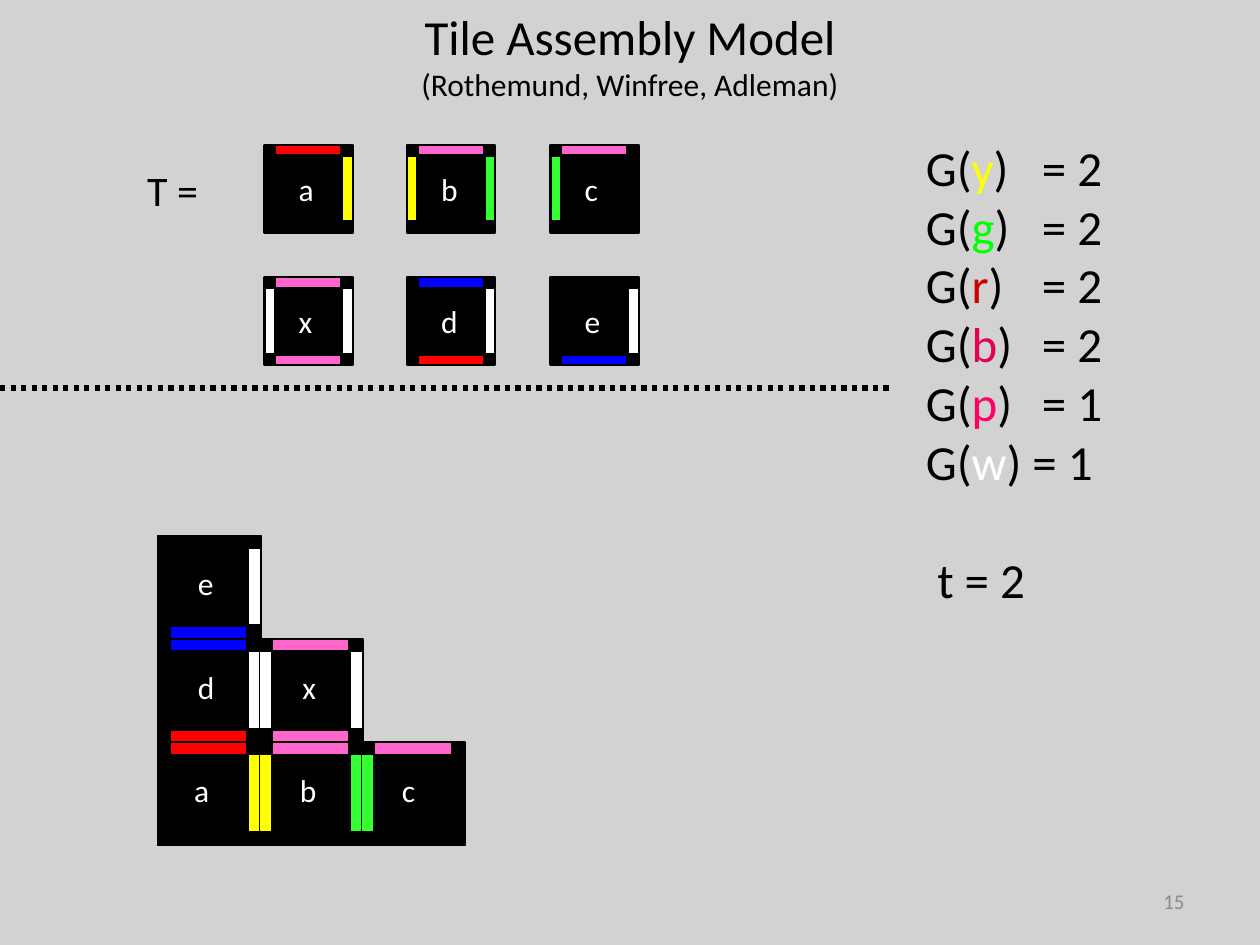
from lxml import etree
from pptx import Presentation
from pptx.dml.color import RGBColor
from pptx.enum.dml import MSO_LINE
from pptx.enum.shapes import MSO_CONNECTOR, MSO_SHAPE
from pptx.enum.text import MSO_ANCHOR, PP_ALIGN
from pptx.oxml.ns import qn
from pptx.util import Inches, Pt

RECTANGLE = MSO_SHAPE.RECTANGLE
STRAIGHT = MSO_CONNECTOR.STRAIGHT
SYSTEM_DOT = MSO_LINE.ROUND_DOT
TOP, MIDDLE = MSO_ANCHOR.TOP, MSO_ANCHOR.MIDDLE
LEFT, CENTER, RIGHT = PP_ALIGN.LEFT, PP_ALIGN.CENTER, PP_ALIGN.RIGHT

FONT = "Calibri"
COLORS = {
    "background": "D2D2D2", "black": "000000", "white": "FFFFFF", "gray": "8C8C8C",
    "red": "FF0000", "yellow": "FFFF00", "pink": "FF66CC", "green": "33FF33",
    "blue": "0000FF", "label green": "00FF00", "label red": "CC0000",
    "label blue": "E40059", "label pink": "FF0066",
}

# Content: glue on each side of each tile type
TILES = {
    "a": {"top": "red", "right": "yellow"},
    "b": {"left": "yellow", "top": "pink", "right": "green"},
    "c": {"left": "green", "top": "pink"},
    "x": {"left": "white", "top": "pink", "bottom": "pink", "right": "white"},
    "d": {"top": "blue", "right": "white", "bottom": "red"},
    "e": {"right": "white", "bottom": "blue"},
}
TITLE = [("Tile Assembly Model", 28), ("(Rothemund, Winfree, Adleman)", 18)]
GLUES = [
    ("y", "yellow", ")\t= 2"), ("g", "label green", ")\t= 2"),
    ("r", "label red", ")\t= 2"), ("b", "label blue", ")\t= 2"),
    ("p", "label pink", ")\t= 1"), ("w", "white", ") = 1"),
]

# Each layout: rows of letters, plus the left and top edges of the cells
TILE_SET = {
    "rows": ["abc", "xde"], "lefts": (2.1, 3.23, 4.37), "tops": (1.15, 2.2),
    "size": 0.7, "line": 1.25, "letter": (0.27, 0.2), "shifts": {},
}
ASSEMBLY = {
    "rows": ["e", "dx", "abc"], "lefts": (1.25, 2.06, 2.87), "tops": (4.25, 5.07, 5.89),
    "size": 0.82, "line": 1, "letter": (0.32, 0.23), "shifts": {"a": -0.03, "x": 0.02},
}


def rgb(name):
    return RGBColor.from_string(COLORS[name])


def write(paragraph, text, size=18, color="black", align=LEFT):
    run = paragraph.add_run()
    run.text = text
    run.font.name = FONT
    run.font.size = Pt(size)
    run.font.color.rgb = rgb(color)
    paragraph.alignment = align


def add_text_box(shapes, left, top, width, height, wrap=True, inset=None, anchor=TOP):
    box = shapes.add_textbox(Inches(left), Inches(top), Inches(width), Inches(height))
    frame = box.text_frame
    frame.word_wrap = wrap
    frame.vertical_anchor = anchor
    if inset is not None:
        frame.margin_left = frame.margin_right = Inches(inset)
        frame.margin_top = frame.margin_bottom = Inches(inset)
    return frame


def add_rectangle(shapes, left, top, width, height, color, line_width):
    shape = shapes.add_shape(
        RECTANGLE, Inches(left), Inches(top), Inches(width), Inches(height))
    shape.shadow.inherit = False
    shape.fill.solid()
    shape.fill.fore_color.rgb = rgb(color)
    shape.line.color.rgb = rgb("black")
    shape.line.width = Pt(line_width)


def add_tile(shapes, letter, left, top, layout):
    size, line_width = layout["size"], layout["line"]
    thickness = size * 0.12
    length, far = size * 0.75, size - thickness
    sides = {
        "left": (0, thickness, thickness, length),
        "top": (thickness, 0, length, thickness),
        "right": (far, thickness, thickness, length),
        "bottom": (thickness, far, length, thickness),
    }
    add_rectangle(shapes, left, top, size, size, "black", line_width)
    for side, color in TILES[letter].items():
        x, y, width, height = sides[side]
        add_rectangle(shapes, left + x, top + y, width, height, color, line_width)
    x, y = layout["letter"]
    x += layout["shifts"].get(letter, 0)
    frame = add_text_box(shapes, left + x, top + y, 0.15, 0.3, wrap=False, inset=0)
    write(frame.paragraphs[0], letter, color="white")


def add_tiles(slide, layout):
    group = slide.shapes.add_group_shape()
    for row, top in reversed(list(zip(layout["rows"], layout["tops"]))):
        for letter, left in zip(row, layout["lefts"]):
            add_tile(group.shapes, letter, left, top, layout)


def add_glue_strengths(slide):
    frame = add_text_box(slide.shapes, 7.25, 1.04, 2.08, 3.84)
    for index, (glue, color, strength) in enumerate(GLUES):
        paragraph = frame.paragraphs[0] if index == 0 else frame.add_paragraph()
        write(paragraph, "G(", size=28)
        write(paragraph, glue, size=28, color=color)
        write(paragraph, strength, size=28)
        tabs = etree.SubElement(paragraph._p.get_or_add_pPr(), qn("a:tabLst"))
        etree.SubElement(tabs, qn("a:tab"), pos=str(Inches(0.92)), algn="l")
    # Temperature, one line further down
    paragraph = frame.add_paragraph()
    paragraph.space_before = Pt(34)
    paragraph._p.get_or_add_pPr().set("marL", str(Inches(0.09)))
    write(paragraph, "t = 2", size=28)


def main():
    presentation = Presentation()
    presentation.slide_width, presentation.slide_height = Inches(10), Inches(7.5)
    slide = presentation.slides.add_slide(presentation.slide_layouts[5])
    slide.background.fill.solid()
    slide.background.fill.fore_color.rgb = rgb("background")

    # Title
    title = slide.shapes.title
    title.left, title.top = Inches(0), Inches(0)
    title.width, title.height = Inches(10), Inches(1.37)
    frame = title.text_frame
    frame.vertical_anchor = TOP
    for index, (text, size) in enumerate(TITLE):
        paragraph = frame.paragraphs[0] if index == 0 else frame.add_paragraph()
        write(paragraph, text, size=size, align=CENTER)

    # Tile set above the divider, assembly below it
    frame = add_text_box(slide.shapes, 1.07, 1.26, 0.88, 0.5, wrap=False)
    write(frame.paragraphs[0], "T =", size=24)
    add_tiles(slide, TILE_SET)
    add_tiles(slide, ASSEMBLY)
    divider = slide.shapes.add_connector(
        STRAIGHT, Inches(0), Inches(3.08), Inches(7.08), Inches(3.08))
    divider.line.color.rgb = rgb("black")
    divider.line.width = Pt(3)
    divider.line.dash_style = SYSTEM_DOT
    etree.SubElement(divider._element.spPr, qn("a:effectLst"))

    add_glue_strengths(slide)

    # Slide number
    frame = add_text_box(slide.shapes, 7.17, 6.95, 2.33, 0.4, anchor=MIDDLE)
    write(frame.paragraphs[0], "15", size=12, color="gray", align=RIGHT)

    presentation.save("out.pptx")


if __name__ == "__main__":
    main()
